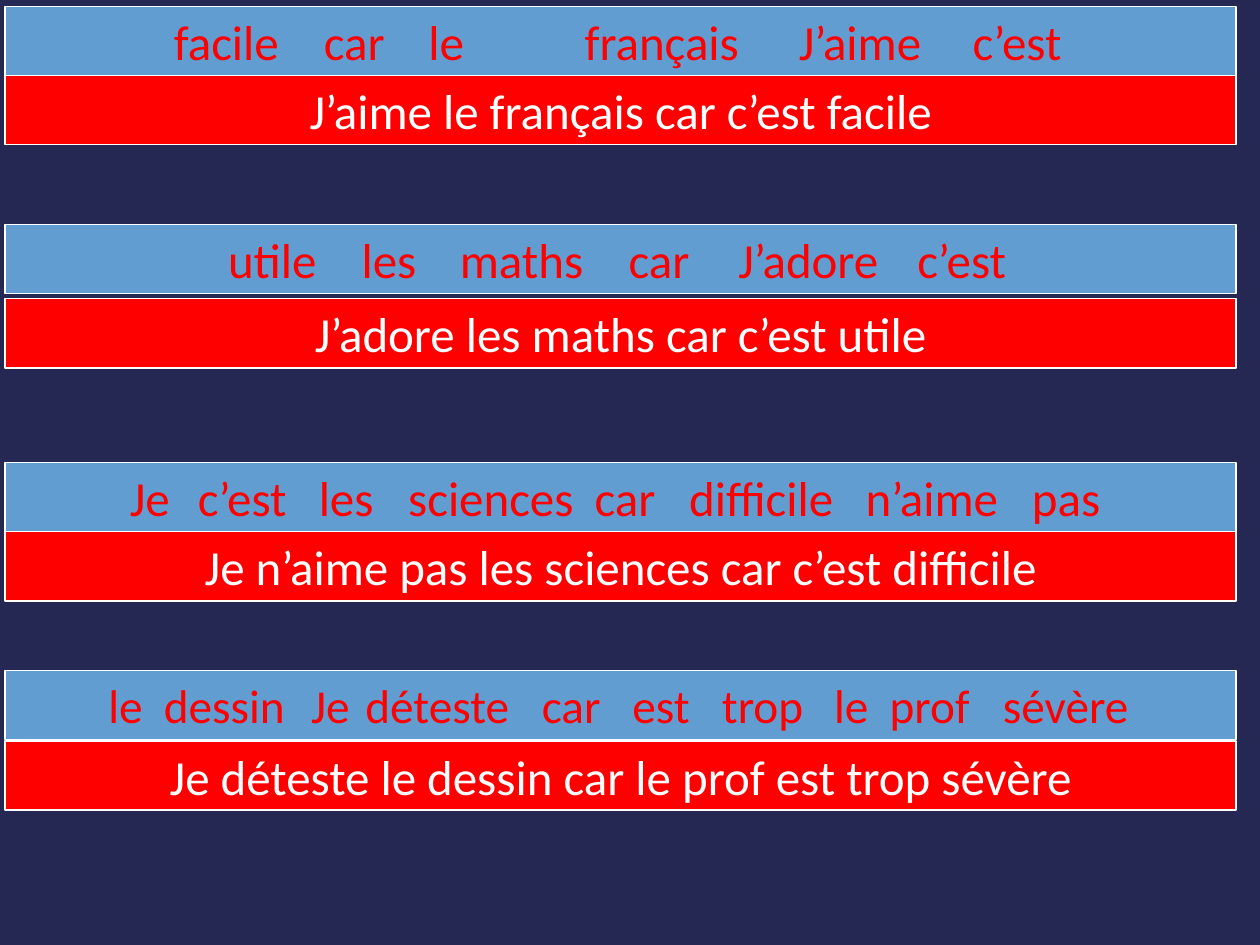
from dataclasses import dataclass

from lxml import etree
from pptx import Presentation
from pptx.dml.color import RGBColor
from pptx.enum.shapes import MSO_SHAPE
from pptx.enum.text import MSO_ANCHOR, PP_ALIGN
from pptx.oxml.ns import qn
from pptx.util import Inches, Pt

RECTANGLE = MSO_SHAPE.RECTANGLE
MIDDLE = MSO_ANCHOR.MIDDLE
LEFT = PP_ALIGN.LEFT
CENTER = PP_ALIGN.CENTER
BLANK_LAYOUT = 6


@dataclass(frozen=True)
class Theme:
    background: RGBColor = RGBColor(0x24, 0x28, 0x52)
    blue: RGBColor = RGBColor(0x62, 0x9D, 0xD1)
    red: RGBColor = RGBColor(0xFF, 0x00, 0x00)
    white: RGBColor = RGBColor(0xFF, 0xFF, 0xFF)
    font: str = "Calibri"
    size: int = 28
    small_size: int = 27
    line_width: float = 0.75


THEME = Theme()
BAR_LEFT, BAR_WIDTH, BAR_HEIGHT = 0.04, 9.77, 0.55

EXERCISES = [
    {
        "tops": (0.05, 0.6),
        "size": THEME.size,
        "words": [("facile", 1.38), ("car", 2.57), ("le", 3.4),
                  ("français", 4.64), ("J’aime", 6.34), ("c’est", 7.72)],
        "answer": "J’aime le français car c’est facile",
    },
    {
        "tops": (1.78, 2.37),
        "size": THEME.size,
        "words": [("utile", 1.81), ("les", 2.87), ("maths", 3.65),
                  ("car", 4.99), ("J’adore", 5.86), ("c’est", 7.28)],
        "answer": "J’adore les maths car c’est utile",
    },
    {
        "tops": (3.67, 4.22),
        "size": THEME.size,
        "words": [("Je", 1.03), ("c’est", 1.57), ("les", 2.53),
                  ("sciences", 3.24), ("car", 4.72), ("difficile", 5.47),
                  ("n’aime", 6.87), ("pas", 8.19)],
        "answer": "Je n’aime pas les sciences car c’est difficile",
    },
    {
        "tops": (5.32, 5.88),
        "size": THEME.small_size,
        "words": [("le", 0.86), ("dessin", 1.3), ("Je", 2.47),
                  ("déteste", 2.9), ("car", 4.3), ("est", 5.02),
                  ("trop", 5.73), ("le", 6.62), ("prof", 7.06),
                  ("sévère", 7.96)],
        "answer": "Je déteste le dessin car le prof est trop sévère",
    },
]


def set_attributes(target, values):
    for name, value in values.items():
        setattr(target, name, value)


def add_bar(slide, top, text, fill, color, size, alignment):
    shape = slide.shapes.add_shape(
        RECTANGLE, Inches(BAR_LEFT), Inches(top), Inches(BAR_WIDTH), Inches(BAR_HEIGHT)
    )
    shape.shadow.inherit = False
    shape.fill.solid()
    shape.fill.fore_color.rgb = fill
    shape.line.color.rgb = THEME.white
    shape.line.width = Pt(THEME.line_width)
    set_attributes(shape.text_frame, {
        "word_wrap": True,
        "vertical_anchor": MIDDLE,
        "margin_left": 0,
        "margin_right": 0,
    })
    paragraph = shape.text_frame.paragraphs[0]
    paragraph.alignment = alignment
    run = paragraph.add_run()
    run.text = text
    set_attributes(run.font, {"name": THEME.font, "size": Pt(size)})
    run.font.color.rgb = color
    return shape


def add_tab_stops(paragraph, positions):
    properties = paragraph._p.get_or_add_pPr()
    tab_list = etree.SubElement(properties, qn("a:tabLst"))
    for position in positions:
        tab = etree.SubElement(tab_list, qn("a:tab"))
        tab.set("pos", str(Inches(position)))
        tab.set("algn", "l")


def add_scrambled_words(slide, top, words, size):
    labels, starts = zip(*words)
    shape = add_bar(
        slide, top, "\t".join(labels), THEME.blue, THEME.red, size, LEFT
    )
    shape.text_frame.margin_left = Inches(starts[0] - BAR_LEFT)
    positions = [start - starts[0] for start in starts[1:]]
    add_tab_stops(shape.text_frame.paragraphs[0], positions)


def add_answer(slide, top, text):
    add_bar(slide, top, text, THEME.red, THEME.white, THEME.size, CENTER)


def main():
    presentation = Presentation()
    set_attributes(presentation, {
        "slide_width": Inches(10),
        "slide_height": Inches(7.5),
    })
    slide = presentation.slides.add_slide(presentation.slide_layouts[BLANK_LAYOUT])
    slide.background.fill.solid()
    slide.background.fill.fore_color.rgb = THEME.background
    for exercise in EXERCISES:
        words_top, answer_top = exercise["tops"]
        add_scrambled_words(slide, words_top, exercise["words"], exercise["size"])
        add_answer(slide, answer_top, exercise["answer"])
    presentation.save("out.pptx")


if __name__ == "__main__":
    main()
